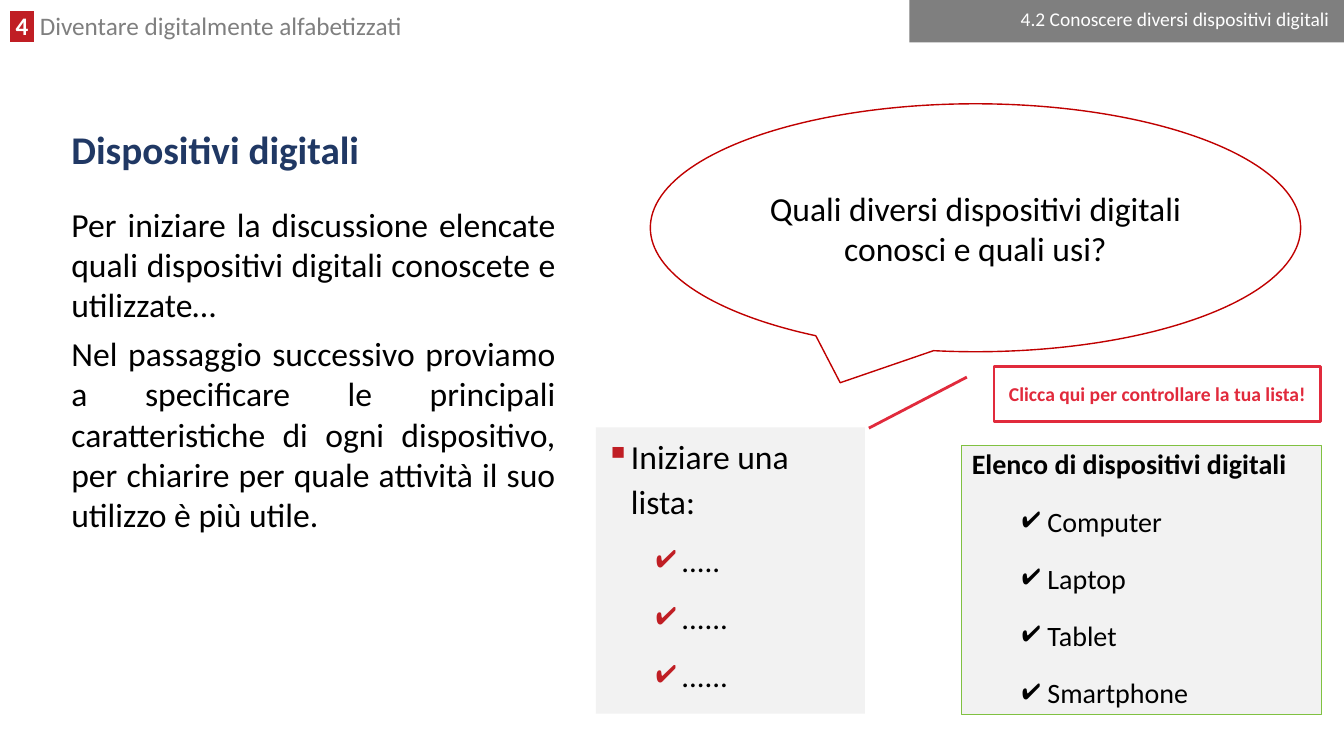
from lxml.etree import SubElement
from pptx import Presentation
from pptx.dml.color import RGBColor
from pptx.enum.shapes import MSO_SHAPE
from pptx.enum.text import MSO_ANCHOR, PP_ALIGN
from pptx.oxml.ns import qn
from pptx.util import Inches, Pt

FONT = "Calibri"
RED, GRAY, PALE = "C01E24", "7F7F7F", "F2F2F2"
BLACK, WHITE = "000000", "FFFFFF"


def rgb(value):
    return RGBColor.from_string(value)


def add_run(p, text, size=24, color=BLACK, bold=False, highlight=None):
    r = p.add_run()
    r.text = text
    r.font.size, r.font.bold = Pt(size), bold
    r.font.color.rgb = rgb(color)
    if highlight:
        mark = SubElement(r.font._element, qn("a:highlight"))
        SubElement(mark, qn("a:srgbClr"), val=highlight)
    r.font.name = FONT


def add_paragraph(tf, text="", align=PP_ALIGN.LEFT, spacing=1.0, before=0,
                  after=0, bullet=None, bullet_color=RED, level=0, **run):
    """Fill the empty first paragraph, or append another one."""
    first = tf.paragraphs[0]
    p = tf.add_paragraph() if first.runs else first
    p.alignment, p.line_spacing, p.level = align, spacing, level
    p.space_before, p.space_after = Pt(before), Pt(after)
    if bullet:
        pPr = p._p.get_or_add_pPr()
        pPr.set("marL", str(Inches(0.25 + 0.5 * level)))
        pPr.set("indent", str(Inches(-0.25)))
        SubElement(SubElement(pPr, qn("a:buClr")), qn("a:srgbClr"), val=bullet_color)
        SubElement(pPr, qn("a:buChar"), char=bullet)
    if text:
        add_run(p, text, **run)
    return p


def add_text(s, box, anchor=MSO_ANCHOR.TOP):
    tf = s.shapes.add_textbox(*map(Inches, box)).text_frame
    tf.word_wrap, tf.vertical_anchor = True, anchor
    return tf


def add_panel(s, box, fill, kind=MSO_SHAPE.RECTANGLE, line=None, width=1,
              anchor=MSO_ANCHOR.MIDDLE, adjustments=()):
    """Draw a filled shape and return its text frame."""
    sp = s.shapes.add_shape(kind, *map(Inches, box))
    sp.shadow.inherit = False
    sp.fill.solid()
    sp.fill.fore_color.rgb = rgb(fill)
    if line:
        sp.line.color.rgb = rgb(line)
        sp.line.width = Pt(width)
    else:
        sp.line.fill.background()
    for i, value in enumerate(adjustments):
        sp.adjustments[i] = value
    tf = sp.text_frame
    tf.word_wrap, tf.vertical_anchor = True, anchor
    return tf


def add_module_header(s, box):
    p = add_paragraph(add_text(s, box), spacing=0.8)
    add_run(p, " 4 ", size=18, color=WHITE, bold=True, highlight=RED)
    add_run(p, " Diventare digitalmente alfabetizzati", size=18, color=GRAY)


def add_title(s, box):
    add_paragraph(add_text(s, box, MSO_ANCHOR.MIDDLE), "Dispositivi digitali",
                  spacing=0.9, size=28, color="203864", bold=True)


def add_introduction(s, box):
    tf = add_text(s, box)
    add_paragraph(tf, "Per iniziare la discussione elencate quali dispositivi "
                  "digitali conoscete e utilizzate…", PP_ALIGN.JUSTIFY)
    add_paragraph(tf, "Nel passaggio successivo proviamo a specificare le principali "
                  "caratteristiche di ogni dispositivo, per chiarire per quale "
                  "attività il suo utilizzo è più utile.",
                  PP_ALIGN.JUSTIFY, before=6, after=6)


def add_section_tab(s, box):
    add_paragraph(add_panel(s, box, GRAY), "4.2 Conoscere diversi dispositivi digitali ",
                  PP_ALIGN.RIGHT, spacing=0.7, size=13.9, color=WHITE)


def add_checks(tf, items, **fmt):
    for item in items:
        add_paragraph(tf, item, before=12, bullet="✔", level=1, **fmt)


def add_starter_list(s, box):
    tf = add_panel(s, box, PALE, anchor=MSO_ANCHOR.TOP)
    add_paragraph(tf, "Iniziare una lista:", spacing=1.1, bullet="▪")
    add_checks(tf, (".....", "......", "......"), spacing=1.1, size=22)


def add_question(s, box):
    tf = add_panel(s, box, WHITE, MSO_SHAPE.OVAL_CALLOUT, line="C00000",
                   adjustments=(-0.208, 0.625))
    add_paragraph(tf, "Quali diversi dispositivi digitali conosci e quali usi?",
                  PP_ALIGN.CENTER)


def add_device_list(s, box):
    tf = add_panel(s, box, PALE, line="80C141", width=0.75, anchor=MSO_ANCHOR.TOP)
    add_paragraph(tf, "Elenco di dispositivi digitali", spacing=0.9, size=20, bold=True)
    add_checks(tf, ("Computer", "Laptop", "Tablet", "Smartphone"),
               spacing=1.2, size=20, bullet_color=BLACK)


def add_check_callout(s, box):
    accent = "E12A3C"
    tf = add_panel(s, box, WHITE, MSO_SHAPE.LINE_CALLOUT_1, line=accent, width=2)
    add_paragraph(tf, "Clicca qui per controllare la tua lista!", PP_ALIGN.CENTER,
                  size=14, color=accent, bold=True)


def main():
    prs = Presentation()
    prs.slide_width, prs.slide_height = Inches(13.33), Inches(7.5)
    s = prs.slides.add_slide(prs.slide_layouts[6])
    add_module_header(s, (0, 0.11, 9.52, 0.34))
    add_title(s, (0.61, 1.18, 12.1, 0.66))
    add_introduction(s, (0.61, 1.97, 5, 5.32))
    add_section_tab(s, (9.02, 0, 4.31, 0.42))
    add_starter_list(s, (5.91, 4.24, 2.67, 2.84))
    add_question(s, (6.45, 1.03, 6.45, 2.46))
    add_device_list(s, (9.54, 4.42, 3.57, 2.67))
    add_check_callout(s, (9.86, 3.64, 3.24, 0.54))
    prs.save("out.pptx")


if __name__ == "__main__":
    main()
